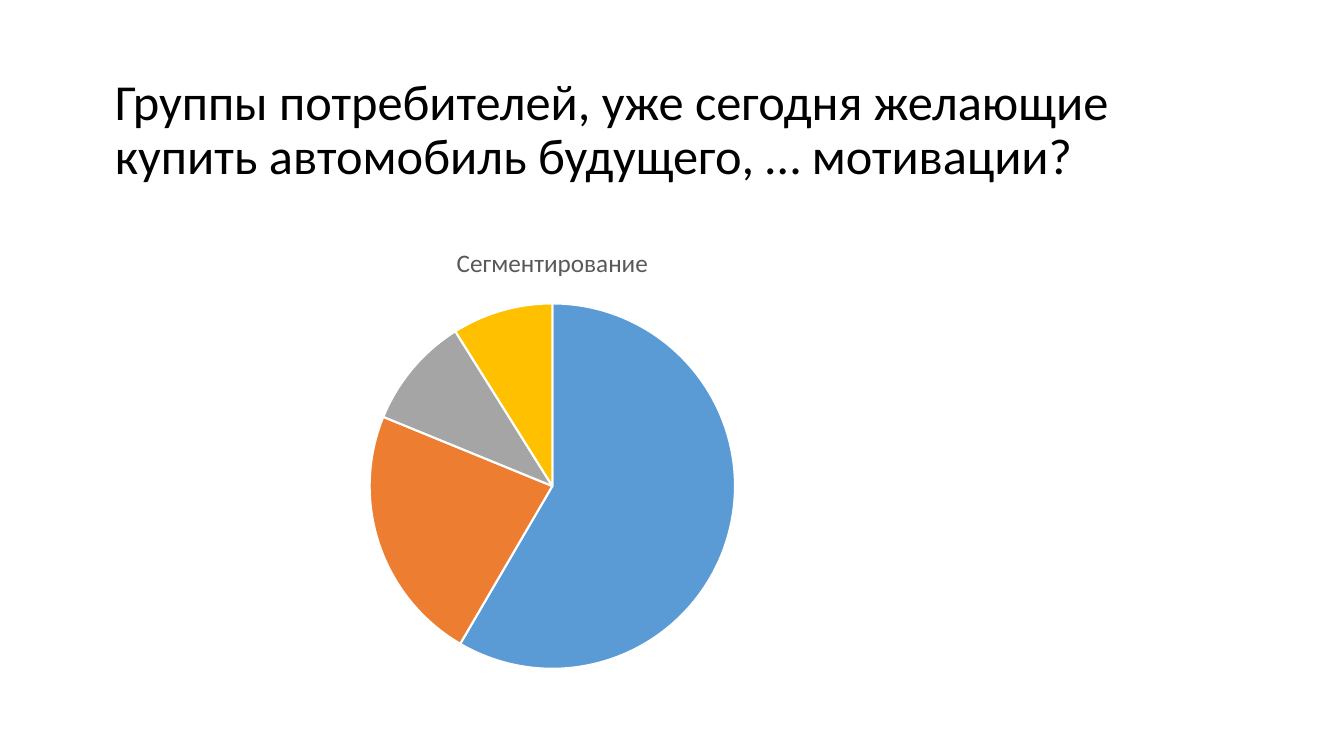
import pptx
import pptx.chart.data
import pptx.dml.color
import pptx.enum.chart
import pptx.enum.text
import pptx.oxml
import pptx.oxml.ns
import pptx.util
from pptx.util import Cm

FONT = "Calibri"
HUES = {
    "ink": "000000",
    "grey": "595959",
    "white": "FFFFFF",
    "slices": ["5B9BD5", "ED7D31", "A5A5A5", "FFC000"],
}
HEAD = "Группы потребителей, уже сегодня желающие купить автомобиль будущего, … мотивации?"
NAME = "Сегментирование"
SHARES = {"1": 59, "2": 23, "3": 10, "4": 9}


def color(hue):
    return pptx.dml.color.RGBColor.from_string(hue)


def write(frame, text, size=18, hue=HUES["ink"], align=None, lead=None):
    """Put one formatted paragraph into a text frame."""
    frame.text = text
    para = frame.paragraphs[0]
    para.alignment = align
    para.line_spacing = lead
    font = para.runs[0].font
    font.name, font.size, font.bold = FONT, pptx.util.Pt(size), False
    font.color.rgb = color(hue)


def add_title(slide, text, box):
    title = slide.shapes.title
    title.left, title.top, title.width, title.height = box
    frame = title.text_frame
    frame.word_wrap = True
    frame.auto_size = pptx.enum.text.MSO_AUTO_SIZE.NONE
    frame.vertical_anchor = pptx.enum.text.MSO_ANCHOR.MIDDLE
    write(frame, text, size=36, align=pptx.enum.text.PP_ALIGN.LEFT, lead=0.9)


def set_plot(chart, x, y, w, h):
    """Fix the inner plot area, in fractions of the chart."""
    area = chart.plots[0]._element.getparent()
    for old in area.findall(pptx.oxml.ns.qn("c:layout")):
        area.remove(old)
    parts = "".join(f'<c:{tag} val="{val}"/>' for tag, val in (
        ("layoutTarget", "inner"), ("xMode", "edge"), ("yMode", "edge"),
        ("x", x), ("y", y), ("w", w), ("h", h)))
    area.insert(0, pptx.oxml.parse_xml(
        f'<c:layout {pptx.oxml.ns.nsdecls("c")}>'
        f'<c:manualLayout>{parts}</c:manualLayout></c:layout>'))


def add_pie(slide, name, shares, box):
    data = pptx.chart.data.CategoryChartData()
    data.categories = list(shares)
    data.add_series(name, list(shares.values()))
    kind = pptx.enum.chart.XL_CHART_TYPE.PIE
    chart = slide.shapes.add_chart(kind, *box, data).chart
    chart.has_legend = False
    chart.font.name, chart.font.size = FONT, pptx.util.Pt(10)
    chart.font.color.rgb = color(HUES["ink"])
    chart.has_title = True
    write(chart.chart_title.text_frame, name, hue=HUES["grey"])
    chart.chart_title.include_in_layout = False

    # Slices
    plot = chart.plots[0]
    plot.vary_by_categories = True
    for i, hue in enumerate(HUES["slices"]):
        form = plot.series[0].points[i].format
        form.fill.solid()
        form.fill.fore_color.rgb = color(hue)
        form.line.color.rgb = color(HUES["white"])
        form.line.width = pptx.util.Pt(1.5)
    set_plot(chart, x=0.28, y=0.17, w=0.44, h=0.8)


def main():
    deck = pptx.Presentation()
    deck.slide_width, deck.slide_height = Cm(33.87), Cm(19.05)
    slide = deck.slides.add_slide(deck.slide_layouts[5])

    # Heading
    add_title(slide, HEAD, (Cm(2.64), Cm(1.47), Cm(29.21), Cm(3.68)))

    # Segment chart
    add_pie(slide, NAME, SHARES, (Cm(3.25), Cm(5.69), Cm(21.34), Cm(11.51)))

    deck.save("out.pptx")


if __name__ == "__main__":
    main()
